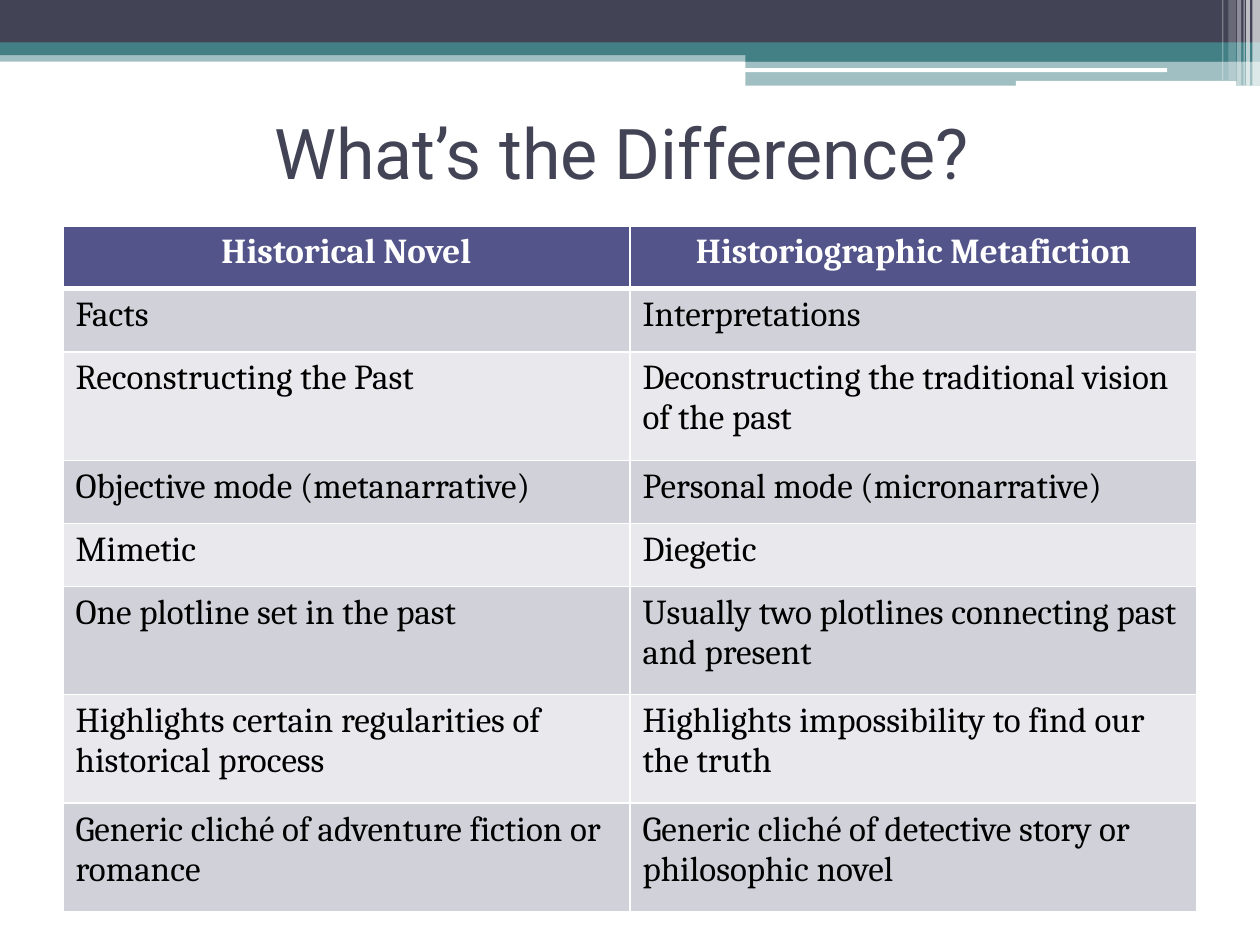
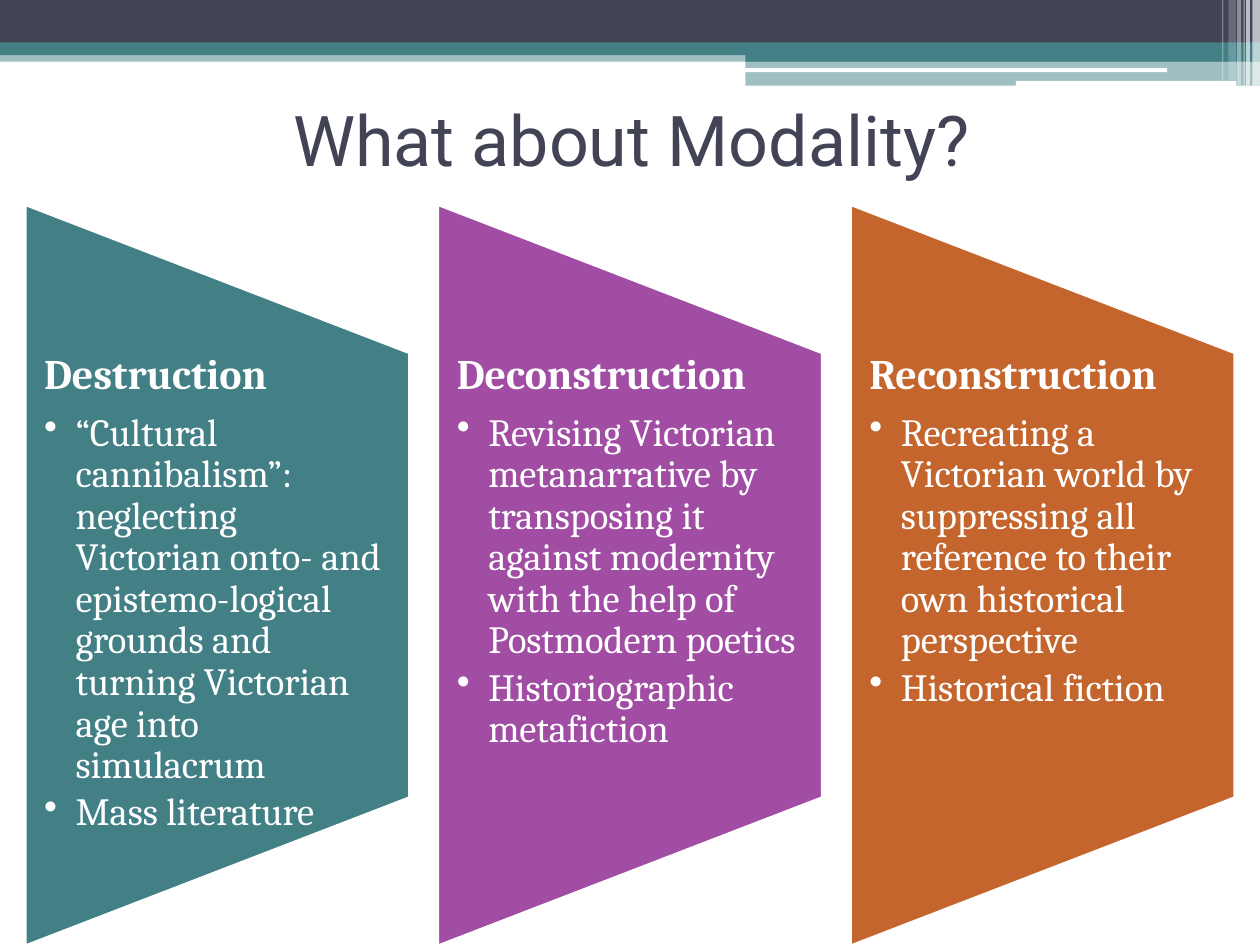
from lxml import etree
from pptx import Presentation
from pptx.dml.color import RGBColor
from pptx.enum.shapes import MSO_SHAPE
from pptx.enum.text import MSO_ANCHOR, PP_ALIGN
from pptx.oxml.ns import qn
from pptx.util import Pt

RECT = MSO_SHAPE.RECTANGLE
ROUNDED = MSO_SHAPE.ROUNDED_RECTANGLE
TRAPEZOID = MSO_SHAPE.FLOWCHART_MANUAL_OPERATION
CENTER, LEFT = PP_ALIGN.CENTER, PP_ALIGN.LEFT
TOP, MIDDLE = MSO_ANCHOR.TOP, MSO_ANCHOR.MIDDLE

COLORS = {
    "slate": "424456", "teal": "438086", "purple": "A04DA3", "orange": "C4652D",
    "indigo": "53548A", "row_dark": "D1D1DA", "row_light": "E9E9ED",
    "white": "FFFFFF", "black": "000000",
}
TITLE_FONT, BODY_FONT = "Roboto", "Cambria"

# Header decoration: shape, left, top, width, height, colour, opacity in percent
HEADER = [
    (RECT, 0, 28.8, 720, 6.5, "teal", 50),
    (RECT, 0, 0, 720, 24.5, "slate", 100),
    (RECT, 0, 24.3, 720, 7.2, "teal", 100),
    (RECT, 426, 28, 294, 7.2, "teal", 100),
    (RECT, 426, 35, 294, 14, "teal", 50),
    (ROUNDED, 425.5, 39, 241.5, 2.2, "white", 100),
    (ROUNDED, 580.5, 46.2, 126, 2.9, "white", 100),
    (RECT, 715.7, 0, 4.3, 49, "white", 65),
    (RECT, 712.1, 0, 2.2, 49, "white", 65),
    (RECT, 710.6, 0, 0.7, 49, "white", 60),
    (RECT, 707, 0, 2.2, 49, "white", 40),
    (RECT, 702, 0, 4.3, 46, "white", 20),
    (RECT, 698.4, 0, 0.7, 46, "white", 30),
]

COMPARISON = [
    ("Historical Novel", "Historiographic Metafiction"),
    ("Facts", "Interpretations"),
    ("Reconstructing the Past", "Deconstructing the traditional vision of the past"),
    ("Objective mode (metanarrative)", "Personal mode (micronarrative)"),
    ("Mimetic", "Diegetic"),
    ("One plotline set in the past", "Usually two plotlines connecting past and present"),
    ("Highlights certain regularities of historical process",
     "Highlights impossibility to find our the truth"),
    ("Generic cliché of adventure fiction or romance",
     "Generic cliché of detective story or philosophic novel"),
]
ONE_LINE, TWO_LINES = 36, 62
ROW_HEIGHTS = [ONE_LINE, ONE_LINE, TWO_LINES, ONE_LINE, ONE_LINE] + [TWO_LINES] * 3

MODALITIES = [
    ("Destruction", "teal",
     ["“Cultural cannibalism”: neglecting Victorian onto- and epistemo-logical grounds "
      "and turning Victorian age into simulacrum", "Mass literature"]),
    ("Deconstruction", "purple",
     ["Revising Victorian metanarrative by transposing it against modernity "
      "with the help of Postmodern poetics", "Historiographic metafiction"]),
    ("Reconstruction", "orange",
     ["Recreating a Victorian world by suppressing all reference to their own "
      "historical perspective", "Historical fiction"]),
]
PANEL_LEFT, PANEL_STEP, PANEL_WIDTH = 14.4, 235.8, 219.6
PANEL_HEIGHT, PANEL_MIDDLE = 423.5, 328.7


def rgb(color):
    return RGBColor.from_string(COLORS[color])


def set_font(paragraph, name, size, color, bold=False):
    font = paragraph.font
    font.name, font.size, font.bold = name, Pt(size), bold
    font.color.rgb = rgb(color)


def add_filled(slide, kind, left, top, width, height, color, opacity=100):
    shape = slide.shapes.add_shape(kind, Pt(left), Pt(top), Pt(width), Pt(height))
    shape.shadow.inherit = False
    shape.fill.solid()
    shape.fill.fore_color.rgb = rgb(color)
    shape.line.fill.background()
    if opacity < 100:
        fill_color = shape.element.spPr.find(".//" + qn("a:srgbClr"))
        etree.SubElement(fill_color, qn("a:alpha"), val=str(opacity * 1000))
    return shape


def move_header_to_layout(slide):
    """Draw the header once and hand it to the layout, behind its title."""
    layout = slide.slide_layout
    for holder in list(layout.placeholders)[1:]:
        holder.element.getparent().remove(holder.element)
    title = layout.placeholders[0].element
    for part in HEADER:
        title.addprevious(add_filled(slide, *part).element)


def set_title(slide, text, left, top):
    title = slide.shapes.title
    title.left, title.top, title.width, title.height = Pt(left), Pt(top), Pt(648), Pt(84)
    frame = title.text_frame
    frame.text = text
    frame.vertical_anchor = MIDDLE
    frame.paragraphs[0].alignment = CENTER
    set_font(frame.paragraphs[0], TITLE_FONT, 40, "slate")


def set_borders(cell, **widths):
    properties = cell._tc.get_or_add_tcPr()
    for side in "LRTB":
        line = etree.SubElement(properties, qn("a:ln" + side),
                                w=str(Pt(widths.get(side, 1))))
        fill = etree.SubElement(line, qn("a:solidFill"))
        etree.SubElement(fill, qn("a:srgbClr"), val=COLORS["white"])


def add_comparison(slide):
    table = slide.shapes.add_table(len(COMPARISON), 2, Pt(36), Pt(129),
                                   Pt(648), Pt(sum(ROW_HEIGHTS))).table
    table.horz_banding = False
    for r, (texts, height) in enumerate(zip(COMPARISON, ROW_HEIGHTS)):
        table.rows[r].height = Pt(height)
        heading = r == 0
        row_color = "indigo" if heading else ("row_light", "row_dark")[r % 2]
        for c, text in enumerate(texts):
            cell = table.cell(r, c)
            cell.text = text
            set_borders(cell, T=3 if r == 1 else 1, B=3 if heading else 1)
            cell.fill.solid()
            cell.fill.fore_color.rgb = rgb(row_color)
            paragraph = cell.text_frame.paragraphs[0]
            paragraph.alignment = CENTER if heading else LEFT
            set_font(paragraph, BODY_FONT, 20, "white" if heading else "black", heading)


def add_bullet(paragraph):
    paragraph.level = 1
    properties = paragraph._p.get_or_add_pPr()
    properties.set("marL", str(Pt(18)))
    properties.set("indent", str(-Pt(18)))
    etree.SubElement(properties, qn("a:buChar"), char="•")


def add_panel(slide, left, heading, color, points):
    # Trapezoid turned a quarter to the left
    panel = add_filled(slide, TRAPEZOID, left + (PANEL_WIDTH - PANEL_HEIGHT) / 2,
                       PANEL_MIDDLE - PANEL_WIDTH / 2, PANEL_HEIGHT, PANEL_WIDTH, color)
    panel.rotation = 270
    panel.line.color.rgb = rgb("white")
    panel.line.width = Pt(1.5)

    # Heading and bullets
    frame = slide.shapes.add_textbox(Pt(left), Pt(201.6), Pt(PANEL_WIDTH), Pt(254)).text_frame
    frame.word_wrap = True
    frame.vertical_anchor = TOP
    frame.margin_left = frame.margin_right = Pt(10.8)
    frame.margin_top = frame.margin_bottom = 0
    for i, text in enumerate([heading] + points):
        paragraph = frame.add_paragraph() if i else frame.paragraphs[0]
        paragraph.text = text
        paragraph.line_spacing = 0.9
        paragraph.space_after = Pt(3.3 if i else 8.4)
        set_font(paragraph, BODY_FONT, 22 if i else 24, "white", bold=i == 0)
        if i:
            add_bullet(paragraph)


def main():
    deck = Presentation()
    deck.slide_width, deck.slide_height = Pt(720), Pt(540)
    title_only = deck.slide_layouts[5]

    # Comparison table
    difference = deck.slides.add_slide(title_only)
    move_header_to_layout(difference)
    set_title(difference, "What’s the Difference? ", 36, 44.6)
    add_comparison(difference)

    # Three modalities
    modality = deck.slides.add_slide(title_only)
    set_title(modality, "What about Modality?", 36.7, 37.4)
    for i, content in enumerate(MODALITIES):
        add_panel(modality, PANEL_LEFT + i * PANEL_STEP, *content)

    deck.save("out.pptx")


if __name__ == "__main__":
    main()
